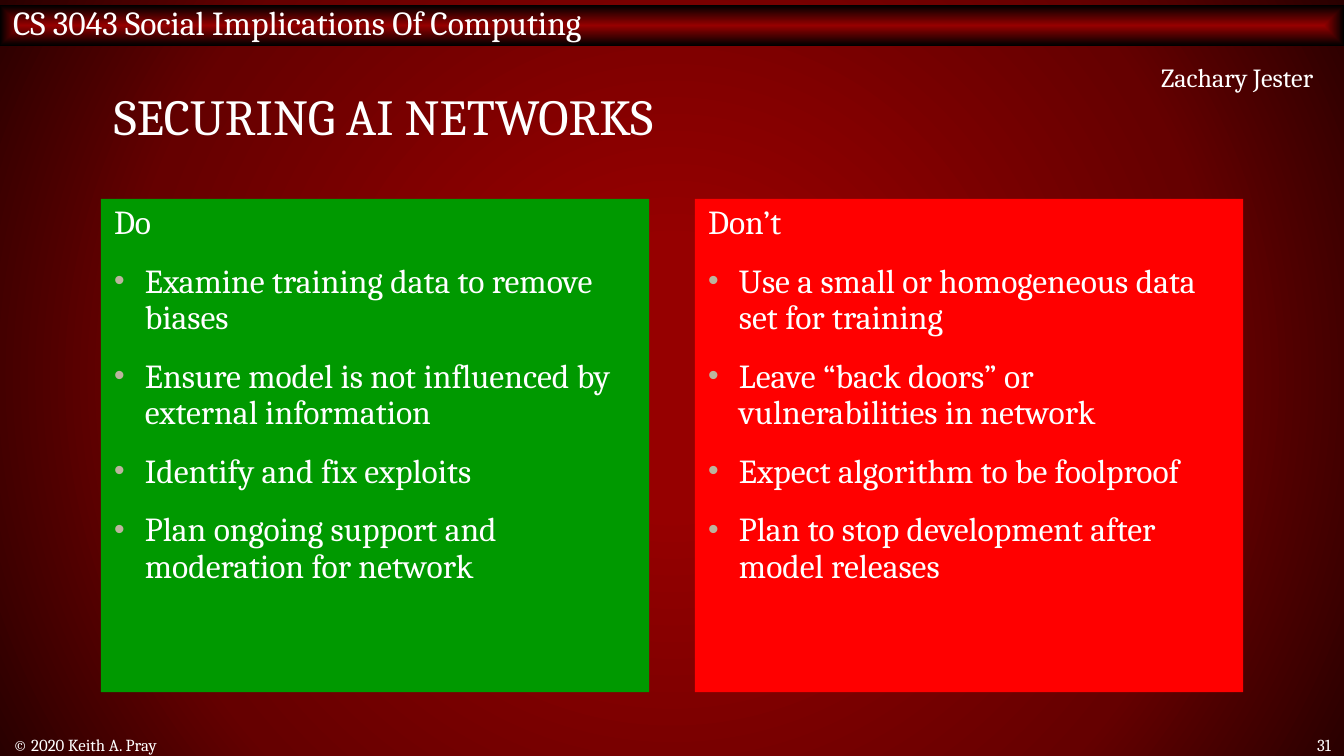
import pptx
import pptx.dml.color
import pptx.enum.shapes
import pptx.enum.text
import pptx.oxml
import pptx.oxml.ns
import pptx.util
from pptx.util import Inches

ALIGN = pptx.enum.text.PP_ALIGN
ANCHOR = pptx.enum.text.MSO_ANCHOR
FONT, WHITE, BULLET = "Cambria", "FFFFFF", "BCB49E"

COURSE = "CS 3043 Social Implications Of Computing"
# text, (left, top, width, height), size, alignment, anchor, line spacing
LABELS = [
    ("SECURING AI NETWORKS", (0.75, 0.4, 8.5, 1), 27, ALIGN.LEFT, ANCHOR.MIDDLE, 0.8),
    ("© 2020 Keith A. Pray", (0, 5.46, 6.08, 0.16), 9, ALIGN.LEFT, ANCHOR.MIDDLE, 1.0),
    ("31", (9.32, 5.46, 0.68, 0.16), 9, ALIGN.RIGHT, ANCHOR.MIDDLE, 1.0),
    ("Zachary Jester", (7.49, 0.41, 2.38, 0.34), 14, ALIGN.RIGHT, ANCHOR.TOP, 1.0),
]
PANELS = [
    ("Do", "009900", [
        "Examine training data to remove biases",
        "Ensure model is not influenced by external information",
        "Identify and fix exploits",
        "Plan ongoing support and moderation for network",
    ]),
    ("Don’t", "FF0000", [
        "Use a small or homogeneous data set for training",
        "Leave “back doors” or vulnerabilities in network",
        "Expect algorithm to be foolproof",
        "Plan to stop development after model releases",
    ]),
]
PANEL_LEFT, PANEL_TOP, PANEL_WIDTH, PANEL_HEIGHT, PANEL_GAP = 0.75, 1.48, 4.08, 3.67, 0.34
INDENT = 0.23


def color(hex_value):
    return pptx.dml.color.RGBColor.from_string(hex_value)


def make_element(tag, content="", attributes=""):
    """Make one element of the drawing namespace."""
    return pptx.oxml.parse_xml(
        f"<a:{tag} {pptx.oxml.ns.nsdecls('a')} {attributes}>{content}</a:{tag}>")


def set_path_gradient(fill, holder, shape, stops):
    """Fill holder with a gradient that spreads from its centre."""
    fill.solid()
    solid = holder.find(".//" + pptx.oxml.ns.qn("a:solidFill"))
    stop_xml = "".join(f'<a:gs pos="{pos * 1000}"><a:srgbClr val="{hex_value}"/></a:gs>'
                       for pos, hex_value in stops)
    center = '<a:fillToRect l="50000" t="50000" r="50000" b="50000"/>'
    gradient = make_element("gradFill", f'<a:gsLst>{stop_xml}</a:gsLst>'
                                        f'<a:path path="{shape}">{center}</a:path>',
                            'rotWithShape="1"')
    solid.getparent().replace(solid, gradient)


def add_bullet(paragraph):
    properties = paragraph._p.get_or_add_pPr()
    properties.set("marL", str(Inches(INDENT)))
    properties.set("indent", str(-Inches(INDENT)))
    properties.append(make_element("buClr", f'<a:srgbClr val="{BULLET}"/>'))
    properties.append(make_element("buSzPct", attributes='val="90000"'))
    properties.append(make_element("buFont", attributes='typeface="Arial"'))
    properties.append(make_element("buChar", attributes='char="•"'))


def write(paragraph, text, size, **formats):
    paragraph.text = text
    for name, value in formats.items():
        setattr(paragraph, name, value)
    for name, value in {"name": FONT, "size": pptx.util.Pt(size)}.items():
        setattr(paragraph.font, name, value)
    paragraph.font.color.rgb = color(WHITE)


def set_frame(frame, **formats):
    for name, value in {"word_wrap": True, **formats}.items():
        setattr(frame, name, value)


def add_rectangle(slide, *box):
    rectangle = slide.shapes.add_shape(
        pptx.enum.shapes.MSO_SHAPE.RECTANGLE, *map(Inches, box))
    rectangle.shadow.inherit = False
    rectangle.line.fill.background()
    return rectangle


def add_panel(slide, left, heading, fill, points):
    panel = add_rectangle(slide, left, PANEL_TOP, PANEL_WIDTH, PANEL_HEIGHT)
    panel.fill.solid()
    panel.fill.fore_color.rgb = color(fill)
    frame = panel.text_frame
    set_frame(frame, vertical_anchor=ANCHOR.TOP)
    formats = {"alignment": ALIGN.LEFT, "line_spacing": 0.9}
    write(frame.paragraphs[0], heading, 18, **formats)
    for point in points:
        paragraph = frame.add_paragraph()
        add_bullet(paragraph)
        write(paragraph, point, 18, space_before=pptx.util.Pt(12), **formats)


def main():
    deck = pptx.Presentation()
    deck.slide_width = Inches(10)
    deck.slide_height = deck.slide_width * 9 // 16
    slide = deck.slides.add_slide(deck.slide_layouts[6])
    set_path_gradient(slide.background.fill, slide._element, "circle",
                      [(17, "960000"), (71, "650000"), (100, "290000")])

    course_bar = add_rectangle(slide, 0, 0.04, 10, 0.3)
    set_path_gradient(course_bar.fill, course_bar._element.spPr, "shape",
                      [(0, "960000"), (100, "000000")])
    set_frame(course_bar.text_frame, vertical_anchor=ANCHOR.MIDDLE, margin_top=0)
    write(course_bar.text_frame.paragraphs[0], COURSE, 18, alignment=ALIGN.LEFT)

    for index, panel in enumerate(PANELS):
        add_panel(slide, PANEL_LEFT + index * (PANEL_WIDTH + PANEL_GAP), *panel)

    for text, box, size, alignment, anchor, spacing in LABELS:
        frame = slide.shapes.add_textbox(*map(Inches, box)).text_frame
        set_frame(frame, vertical_anchor=anchor)
        write(frame.paragraphs[0], text, size, alignment=alignment, line_spacing=spacing)

    deck.save("out.pptx")


if __name__ == "__main__":
    main()
